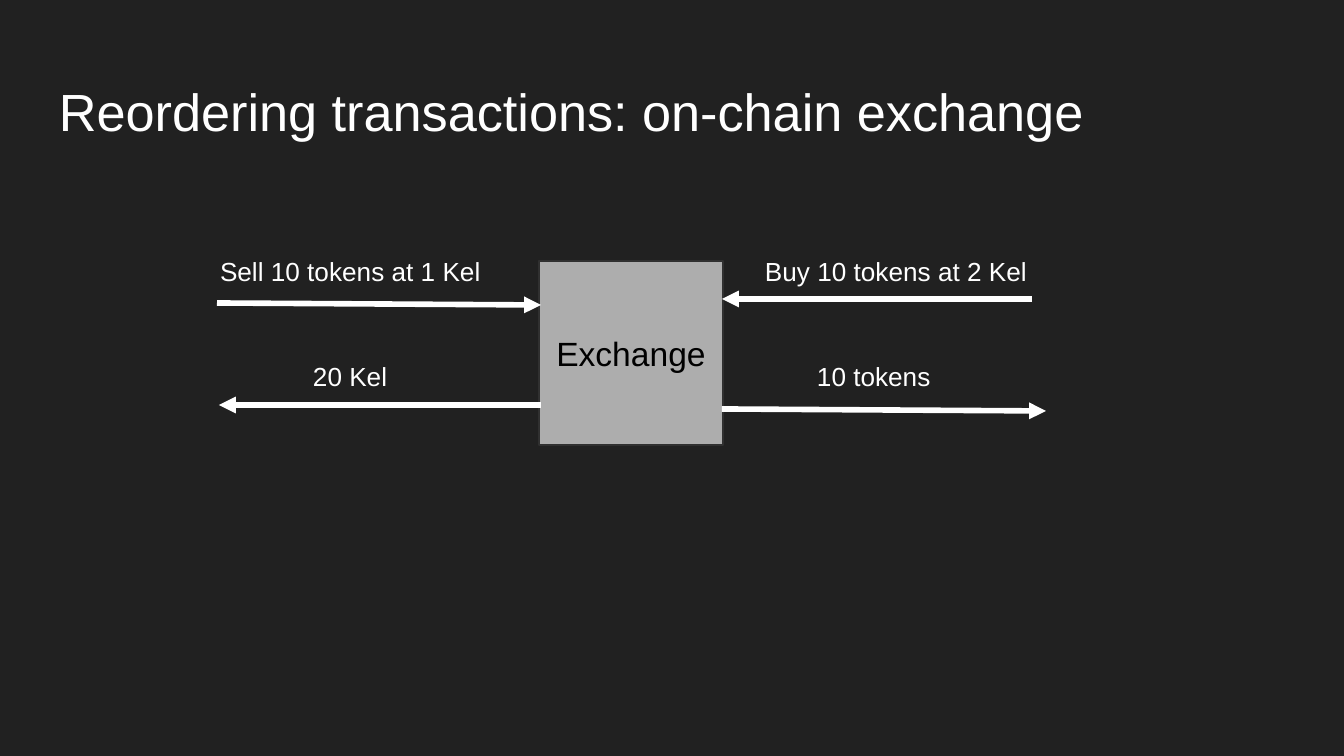
from dataclasses import dataclass

from lxml.etree import SubElement
from pptx import Presentation
from pptx.dml.color import RGBColor
from pptx.enum.shapes import MSO_CONNECTOR as Connector, MSO_SHAPE as Preset
from pptx.enum.text import MSO_ANCHOR as Anchor, PP_ALIGN as Align
from pptx.oxml.ns import qn
from pptx.shapes.base import BaseShape
from pptx.slide import Slide
from pptx.util import Emu, Pt

PX = 914400 / 134.4  # EMU in one px
WIDTH, HEIGHT = 1344, 756
INSET = 13
LABEL_HEIGHT = 62
REQUEST_TOP, REPLY_TOP = 242, 347  # the two rows of labels

FONT = "Arial"
BACKGROUND, WHITE, BLACK = "212121", "FFFFFF", "000000"
BOX_FILL, BOX_LINE = "ADADAD", "303030"


@dataclass(frozen=True)
class Message:
    """An arrow to or from the exchange, with its label."""
    text: str
    label_left: int
    label_top: int
    label_width: int
    start: tuple[int, int]
    end: tuple[int, int]


MESSAGES = [
    Message("Sell 10 tokens at 1 Kel", 207, REQUEST_TOP, 308, (217, 303), (541, 305)),
    Message("10 tokens", 804, REPLY_TOP, 160, (722, 409), (1046, 411)),
    Message("Buy 10 tokens at 2 Kel", 752, REQUEST_TOP, 320, (1032, 299), (722, 299)),
    Message("20 Kel", 300, REPLY_TOP, 122, (541, 405), (219, 405)),
]


def px(*lengths: int) -> list[Emu]:
    return [Emu(round(length * PX)) for length in lengths]


def color(value: str) -> RGBColor:
    return RGBColor.from_string(value)


def write(shape: BaseShape, text: str, size: int, ink: str,
          align: Align = Align.LEFT, anchor: Anchor = Anchor.TOP) -> None:
    frame = shape.text_frame
    frame.word_wrap = True
    frame.vertical_anchor = anchor
    frame.margin_left, frame.margin_top, frame.margin_right, frame.margin_bottom = px(*[INSET] * 4)
    para = frame.paragraphs[0]
    para.text = text
    para.alignment = align
    para.font.name = FONT
    para.font.size = Pt(size)
    para.font.color.rgb = color(ink)


def draw_message(page: Slide, message: Message) -> None:
    group = page.shapes.add_group_shape()
    # Arrow
    arrow = group.shapes.add_connector(Connector.STRAIGHT, *px(*message.start, *message.end))
    arrow.line.color.rgb = color(WHITE)
    arrow.line.width = Pt(3)
    SubElement(arrow.line._get_or_add_ln(), qn("a:tailEnd"), type="triangle")
    SubElement(arrow._element.spPr, qn("a:effectLst"))
    # Label
    label = group.shapes.add_textbox(
        *px(message.label_left, message.label_top, message.label_width, LABEL_HEIGHT))
    write(label, message.text, 14, WHITE)


def main() -> None:
    deck = Presentation()
    deck.slide_width, deck.slide_height = px(WIDTH, HEIGHT)
    page = deck.slides.add_slide(deck.slide_layouts[6])
    page.background.fill.solid()
    page.background.fill.fore_color.rgb = color(BACKGROUND)

    # Title
    title = page.shapes.add_textbox(*px(46, 66, 1253, 85))
    write(title, "Reordering transactions: on-chain exchange", 28, WHITE)

    # Exchange
    box = page.shapes.add_shape(Preset.RECTANGLE, *px(539, 261, 184, 184))
    box.shadow.inherit = False
    box.fill.solid()
    box.fill.fore_color.rgb = color(BOX_FILL)
    box.line.color.rgb = color(BOX_LINE)
    box.line.width = Pt(0.75)
    write(box, "Exchange", 18, BLACK, Align.CENTER, Anchor.MIDDLE)

    # Messages around it
    for message in MESSAGES:
        draw_message(page, message)

    deck.save("out.pptx")


if __name__ == "__main__":
    main()
